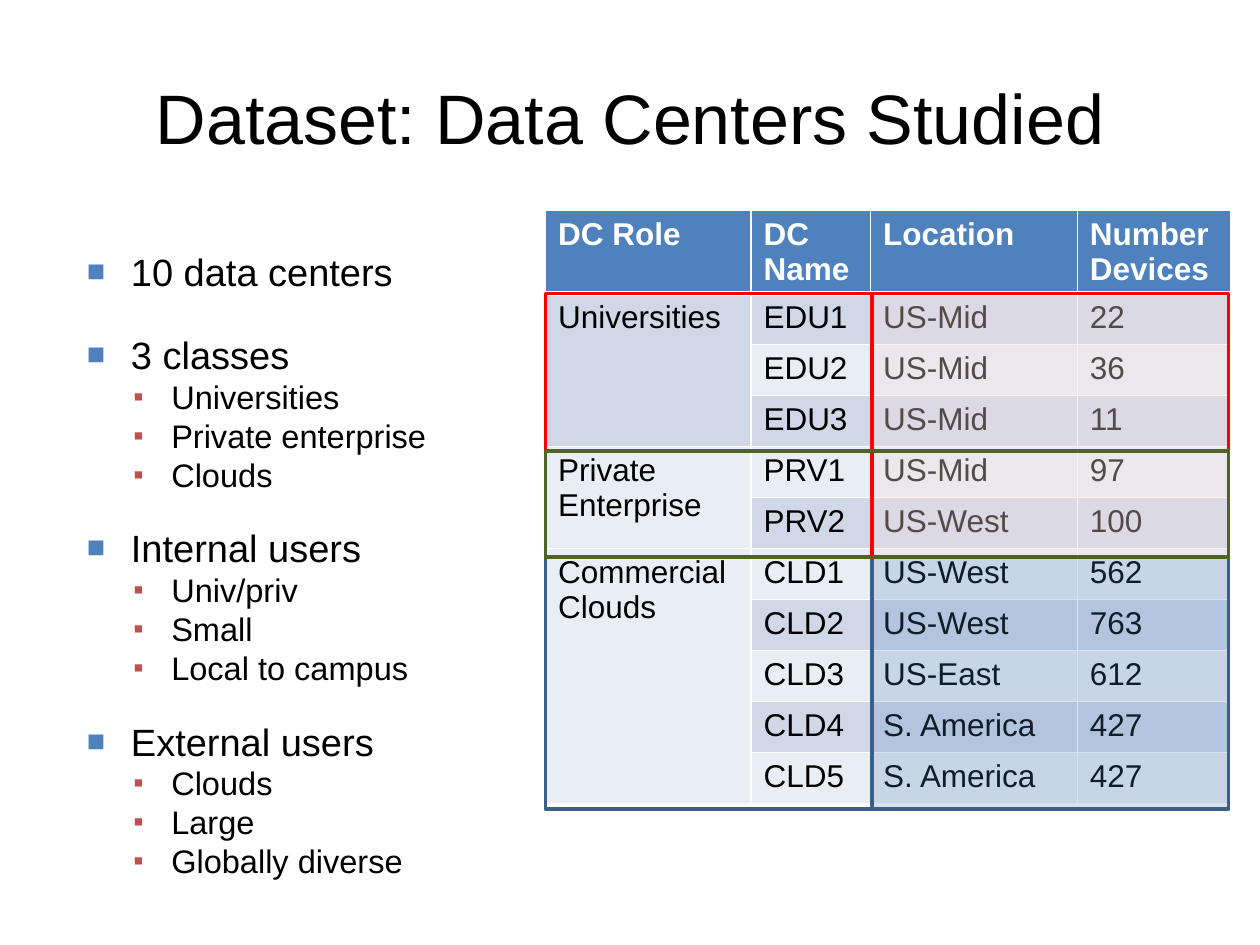
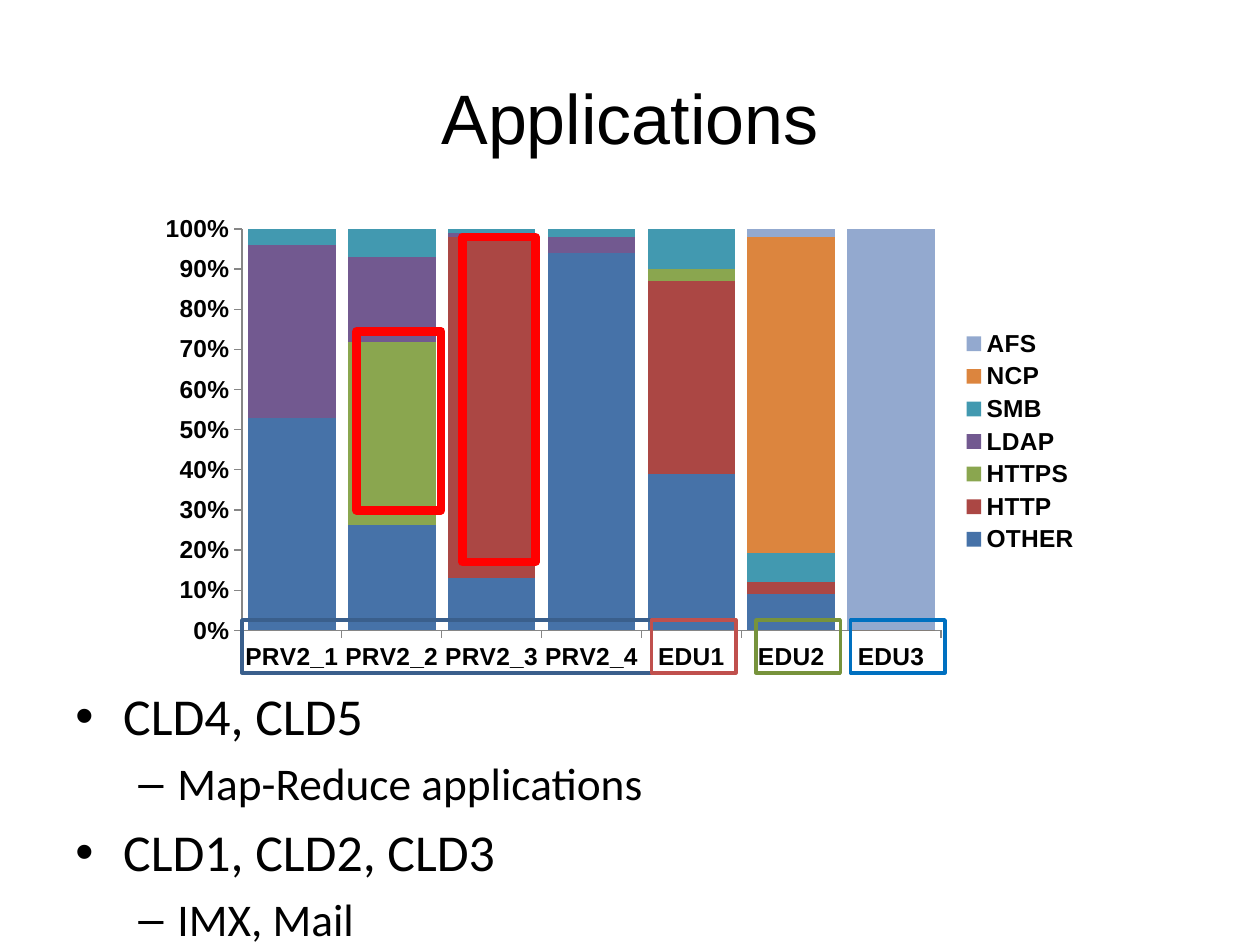
from lxml import etree
from pptx import Presentation
from pptx.chart.data import CategoryChartData
from pptx.dml.color import RGBColor
from pptx.enum.chart import XL_CHART_TYPE, XL_LEGEND_POSITION, XL_TICK_MARK
from pptx.enum.shapes import MSO_SHAPE
from pptx.enum.text import MSO_ANCHOR, PP_ALIGN
from pptx.oxml import parse_xml
from pptx.oxml.ns import nsdecls, qn
from pptx.util import Inches, Pt

RECT = MSO_SHAPE.RECTANGLE
OUTSIDE = XL_TICK_MARK.OUTSIDE
BLACK = RGBColor(0, 0, 0)
WHITE = RGBColor(255, 255, 255)
RED = RGBColor(255, 0, 0)
BLUE = RGBColor(0x4F, 0x81, 0xBD)
NAVY = RGBColor(0x3A, 0x5F, 0x8C)
BRICK = RGBColor(0xC0, 0x50, 0x4D)
FOREST = RGBColor(0x4F, 0x62, 0x28)
OLIVE = RGBColor(0x77, 0x93, 0x3C)
SKY = RGBColor(0x00, 0x70, 0xC0)
PINK = RGBColor(0xF2, 0xDC, 0xDB)
AXIS_GREY = RGBColor(0x86, 0x86, 0x86)
BANDS = RGBColor(0xE9, 0xED, 0xF4), RGBColor(0xD0, 0xD8, 0xE8)

# Slide 1: (level, text, points before)
DATASET_POINTS = [
    (0, "10 data centers", 0),
    (0, "3 classes", 27),
    (1, "Universities", 4.3),
    (1, "Private enterprise", 4.3),
    (1, "Clouds", 4.3),
    (0, "Internal users", 23),
    (1, "Univ/priv", 4.3),
    (1, "Small", 4.3),
    (1, "Local to campus", 4.3),
    (0, "External users", 23),
    (1, "Clouds", 4.3),
    (1, "Large", 4.3),
    (1, "Globally diverse", 4.3),
]
HEADER = ["DC Role", "DC\nName", "Location", "Number Devices"]
DATA_CENTERS = {
    "Universities": [("EDU1", "US-Mid", "22"), ("EDU2", "US-Mid", "36"),
                     ("EDU3", "US-Mid", "11")],
    "Private Enterprise": [("PRV1", "US-Mid", "97"), ("PRV2", "US-West", "100")],
    "Commercial Clouds": [("CLD1", "US-West", "562"), ("CLD2", "US-West", "763"),
                          ("CLD3", "US-East", "612"), ("CLD4", "S. America", "427"),
                          ("CLD5", "S. America", "427")],
}
COL_WIDTHS = [1.63, 0.95, 1.64, 1.22]
HEADER_H, ROW_H = 0.65, 4.05 / 10
# Edges that the frames over the table share
LEFT, SPLIT, RIGHT = 4.33, 6.92, 9.75
TOP, UNI_END, PRV_END, BOTTOM = 2.33, 3.58, 4.42, 6.42
# (left, top, bottom, line, fill, opacity %)
TABLE_FRAMES = [
    (LEFT, TOP, PRV_END, RED, None, None),
    (SPLIT, TOP, PRV_END, RED, PINK, 34),
    (SPLIT, PRV_END, BOTTOM, NAVY, BLUE, 22),
    (LEFT, PRV_END, BOTTOM, NAVY, None, None),
    (LEFT, TOP, UNI_END, RED, None, None),
    (LEFT, UNI_END, PRV_END, FOREST, None, None),
]

# Slide 2
SITES = ["PRV2_1", "PRV2_2", "PRV2_3", "PRV2_4", "EDU1", "EDU2", "EDU3"]
TRAFFIC = [
    ("OTHER", (53, 26, 13, 94, 39, 9, 0), RGBColor(0x46, 0x72, 0xA8)),
    ("HTTP", (0, 0, 85, 0, 48, 3, 0), RGBColor(0xAB, 0x47, 0x44)),
    ("HTTPS", (0, 45, 0, 0, 3, 0, 0), RGBColor(0x8A, 0xA6, 0x4F)),
    ("LDAP", (43, 21, 1, 4, 0, 0, 0), RGBColor(0x72, 0x59, 0x90)),
    ("SMB", (4, 7, 1, 2, 10, 7, 0), RGBColor(0x42, 0x99, 0xB0)),
    ("NCP", (0, 0, 0, 0, 0, 78, 0), RGBColor(0xDC, 0x85, 0x3E)),
    ("AFS", (0, 0, 0, 0, 0, 2, 100), RGBColor(0x93, 0xA9, 0xCF)),
]
PLOT_SHARES = {"x": 0.1, "y": 0.05, "w": 0.74, "h": 0.85}
BAR_FRAMES = [(3.67, 1.88, 0.58, 2.58), (2.83, 2.63, 0.67, 1.42)]
LABEL_TOP, LABEL_H = 4.92, 0.42
LABEL_FRAMES = [(1.92, 3.25, NAVY), (5.17, 0.67, BRICK), (6, 0.67, OLIVE), (6.75, 0.75, SKY)]
CLOUD_POINTS = [
    (0, "CLD4, CLD5", 0),
    (1, "Map-Reduce applications", 5.2),
    (0, "CLD1, CLD2, CLD3", 5.9),
    (1, "IMX, Mail", 5.2),
]

# Per level: size, indent, hanging, bullet, bullet colour, bullet size %
SQUARE_STYLE = [(21.7, 0.48, 0.35, "■", BLUE, 80), (18.6, 0.8, 0.3, "▪", BRICK, 90)]
DOT_STYLE = [(29.6, 0.38, 0.38, "•", BLACK, 100), (25.9, 0.81, 0.31, "–", BLACK, 100)]


def box(*lengths):
    return [Inches(v) for v in lengths]


def add_run(p, text, size, color=BLACK, bold=False, font="Arial"):
    r = p.add_run()
    r.text = text
    r.font.size, r.font.name, r.font.bold = Pt(size), font, bold
    r.font.color.rgb = color


def add_titled_slide(prs, title):
    s = prs.slides.add_slide(prs.slide_layouts[5])
    sp = s.shapes.title
    sp.left, sp.top, sp.width, sp.height = box(0.5, 0.3, 9, 1.25)
    sp.text_frame.vertical_anchor = MSO_ANCHOR.MIDDLE
    p = sp.text_frame.paragraphs[0]
    p.alignment = PP_ALIGN.CENTER
    add_run(p, title, 40)
    return s


def add_frame(s, place, line, width=2, fill=None, opacity=None):
    sp = s.shapes.add_shape(RECT, *box(*place))
    sp.shadow.inherit = False
    sp.line.color.rgb, sp.line.width = line, Pt(width)
    if fill is None:
        sp.fill.background()
        return
    sp.fill.solid()
    sp.fill.fore_color.rgb = fill
    color = sp.fill._xPr.find(qn("a:solidFill"))[0]
    etree.SubElement(color, qn("a:alpha"), val=str(opacity * 1000))


def add_bullets(s, place, points, style, font, spacing, insets):
    tf = s.shapes.add_textbox(*box(*place)).text_frame
    tf.word_wrap = True
    tf.margin_left, tf.margin_top, tf.margin_right, tf.margin_bottom = box(*insets)
    for i, (level, text, before) in enumerate(points):
        size, indent, hanging, bullet, color, share = style[level]
        p = tf.add_paragraph() if i else tf.paragraphs[0]
        p.level, p.line_spacing, p.space_before = level, spacing, Pt(before)
        pPr = p._p.get_or_add_pPr()
        pPr.set("marL", str(Inches(indent)))
        pPr.set("indent", str(-Inches(hanging)))
        clr = etree.SubElement(pPr, qn("a:buClr"))
        etree.SubElement(clr, qn("a:srgbClr"), val=str(color))
        etree.SubElement(pPr, qn("a:buSzPct"), val=str(share * 1000))
        etree.SubElement(pPr, qn("a:buFont"), typeface="Arial")
        etree.SubElement(pPr, qn("a:buChar"), char=bullet)
        add_run(p, text, size, font=font)


def fill_cell(cell, text, fill, color=BLACK, bold=False, bottom=1):
    for i, line in enumerate(text.split("\n")):
        p = cell.text_frame.add_paragraph() if i else cell.text_frame.paragraphs[0]
        if line:
            add_run(p, line, 18, color, bold)
    tcPr = cell._tc.get_or_add_tcPr()
    for side, width in (("L", 1), ("R", 1), ("T", 1), ("B", bottom)):
        tcPr.append(parse_xml(
            f'<a:ln{side} {nsdecls("a")} w="{Pt(width)}"><a:solidFill>'
            f'<a:srgbClr val="{WHITE}"/></a:solidFill></a:ln{side}>'))
    cell.fill.solid()
    cell.fill.fore_color.rgb = fill


def add_data_center_table(s):
    rows = [(role if i == 0 else "", *dc)
            for role, dcs in DATA_CENTERS.items() for i, dc in enumerate(dcs)]
    height = HEADER_H + ROW_H * len(rows)
    table = s.shapes.add_table(len(rows) + 1, len(HEADER),
                               *box(LEFT, 1.67, sum(COL_WIDTHS), height)).table
    for col, width in zip(table.columns, COL_WIDTHS):
        col.width = Inches(width)
    for i, row in enumerate(table.rows):
        row.height = Inches(ROW_H if i else HEADER_H)
    for j, text in enumerate(HEADER):
        fill_cell(table.cell(0, j), text, BLUE, WHITE, True, bottom=3)
    for i, row in enumerate(rows, 1):
        for j, text in enumerate(row):
            fill_cell(table.cell(i, j), text, BANDS[i % 2])
    first = 1
    for dcs in DATA_CENTERS.values():
        last = first + len(dcs) - 1
        table.cell(first, 0).merge(table.cell(last, 0))
        first = last + 1


def style_chart_font(font):
    font.size, font.bold, font.name = Pt(14), True, "Arial"
    font.color.rgb = BLACK


def add_traffic_chart(s):
    data = CategoryChartData()
    data.categories = SITES
    for name, values, _ in TRAFFIC:
        data.add_series(name, values)
    chart = s.shapes.add_chart(XL_CHART_TYPE.COLUMN_STACKED_100,
                               *box(1.17, 1.63, 7.5, 3.75), data).chart
    chart.has_title = False
    chart.font.size, chart.font.name = Pt(10), "Calibri"
    chart.has_legend = True
    chart.legend.position = XL_LEGEND_POSITION.RIGHT
    chart.legend.include_in_layout = False
    style_chart_font(chart.legend.font)
    for axis in (chart.category_axis, chart.value_axis):
        axis.has_major_gridlines = False
        axis.major_tick_mark = OUTSIDE
        axis.format.line.color.rgb = AXIS_GREY
        style_chart_font(axis.tick_labels.font)
    labels = chart.value_axis.tick_labels
    labels.number_format, labels.number_format_is_linked = "0%", False
    plot = chart.plots[0]
    plot.gap_width, plot.overlap, plot.vary_by_categories = 14, 100, False
    for series, (_, _, color) in zip(plot.series, TRAFFIC):
        series.format.fill.solid()
        series.format.fill.fore_color.rgb = color

    area = chart._chartSpace.chart.plotArea
    for old in area.findall(qn("c:layout")):
        area.remove(old)
    shares = "".join(f'<c:{k} val="{v}"/>' for k, v in PLOT_SHARES.items())
    area.insert(0, parse_xml(
        f'<c:layout {nsdecls("c")}><c:manualLayout><c:layoutTarget val="inner"/>'
        f'<c:xMode val="edge"/><c:yMode val="edge"/>{shares}</c:manualLayout></c:layout>'))


def build_dataset_slide(prs):
    s = add_titled_slide(prs, "Dataset: Data Centers Studied")
    add_data_center_table(s)
    for left, top, bottom, line, fill, opacity in TABLE_FRAMES:
        add_frame(s, (left, top, RIGHT - left, bottom - top), line,
                  fill=fill, opacity=opacity)
    add_bullets(s, (0.5, 1.94, 9, 5.23), DATASET_POINTS, SQUARE_STYLE, "Arial", 0.8,
                (0.06, 0.1, 0.1, 0.05))


def build_applications_slide(prs):
    s = add_titled_slide(prs, "Applications")
    add_bullets(s, (0.5, 5.38, 9, 1.95), CLOUD_POINTS, DOT_STYLE, "Calibri", 1.0,
                (0.1, 0.05, 0.1, 0.05))
    add_traffic_chart(s)
    for place in BAR_FRAMES:
        add_frame(s, place, RED, 5)
    for left, width, line in LABEL_FRAMES:
        add_frame(s, (left, LABEL_TOP, width, LABEL_H), line)


def main():
    prs = Presentation()
    prs.slide_width, prs.slide_height = box(10, 7.5)
    build_dataset_slide(prs)
    build_applications_slide(prs)
    prs.save("out.pptx")


if __name__ == "__main__":
    main()
